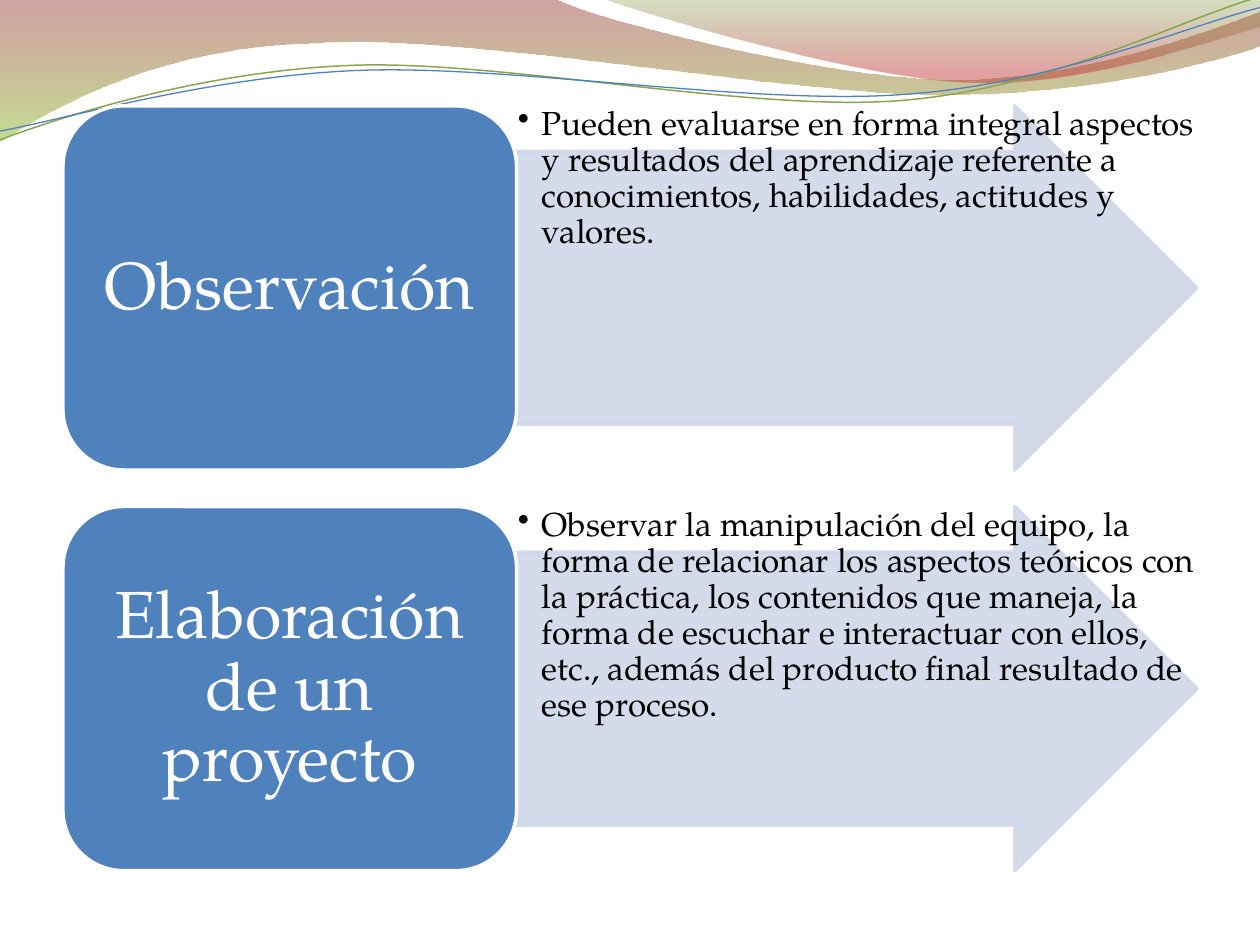
from lxml.etree import SubElement
from pptx import Presentation
from pptx.dml.color import RGBColor
from pptx.enum.shapes import MSO_SHAPE as Shape
from pptx.enum.text import MSO_ANCHOR as Anchor, PP_ALIGN as Align
from pptx.oxml.ns import qn
from pptx.util import Inches, Pt


def rgb(hex_color):
    return RGBColor.from_string(hex_color)


def set_opacity(element, *percents):
    """Give the colours inside element their opacities, in document order."""
    for color, percent in zip(list(element.iter(qn("a:srgbClr"))), percents):
        SubElement(color, qn("a:alpha"), val=str(percent * 1000))


def write(shape, text, size=19, color="000000", align=Align.LEFT,
          anchor=Anchor.TOP, inset=0.01, bullet=None, indent=0.19):
    frame = shape.text_frame
    frame.word_wrap = True
    frame.vertical_anchor = anchor
    frame.margin_left = frame.margin_right = Inches(inset)
    frame.margin_top = frame.margin_bottom = Inches(0.01)
    para = frame.paragraphs[0]
    para.alignment = align
    para.line_spacing = 0.9
    if bullet:
        properties = para._p.get_or_add_pPr()
        properties.set("marL", str(Inches(indent)))
        properties.set("indent", str(-Inches(indent)))
        SubElement(properties, qn("a:buChar"), char=bullet)
    span = para.add_run()
    span.text = text
    span.font.name = SlideBuilder.FONT
    span.font.size = Pt(size)
    span.font.color.rgb = rgb(color)


class SlideBuilder:
    FONT = "TeX Gyre Pagella"
    BLUE, PALE, WHITE = "4F81BD", "D0D8E8", "FFFFFF"

    def __init__(self, page):
        self.shapes = page.shapes

    def outline(self, start, segments, closed=False):
        """Draw segments of one point (a line) or three points (a Bézier curve)."""
        builder = self.shapes.build_freeform(Inches(start[0]), Inches(start[1]))
        points = [point for segment in segments for point in segment]
        builder.add_line_segments(
            [(Inches(x), Inches(y)) for x, y in points], close=closed)
        shape = builder.convert_to_shape()
        shape.shadow.inherit = False
        lines = iter(list(shape._element.iter(qn("a:lnTo"))))
        for segment in segments:
            first, *others = [next(lines) for _ in segment]
            if others:
                first.tag = qn("a:cubicBezTo")
                for line in others:
                    first.append(line[0])
                    line.getparent().remove(line)
        return shape

    def wave(self, start, segments, stops):
        """Draw a closed band with a downward gradient of (position, colour, opacity)."""
        shape = self.outline(start, segments, closed=True)
        shape.line.fill.background()
        shape.fill.gradient()
        shape.fill.gradient_angle = 270
        for stop, (position, color, _) in zip(shape.fill.gradient_stops, stops):
            stop.position = position
            stop.color.rgb = rgb(color)
        set_opacity(shape._element, *[opacity for _, _, opacity in stops])

    def curve(self, start, segments, color, width):
        shape = self.outline(start, segments)
        shape.fill.background()
        shape.line.color.rgb = rgb(color)
        shape.line.width = Pt(width)

    def block(self, kind, left, top, width, height, fill, line):
        shape = self.shapes.add_shape(
            kind, Inches(left), Inches(top), Inches(width), Inches(height))
        shape.shadow.inherit = False
        shape.fill.solid()
        shape.fill.fore_color.rgb = rgb(fill)
        shape.line.color.rgb = rgb(line)
        shape.line.width = Pt(2)
        return shape

    def arrow(self, text, *place):
        shape = self.block(Shape.RIGHT_ARROW, *place, self.PALE, self.PALE)
        shape.adjustments[0], shape.adjustments[1] = 0.75, 0.5
        set_opacity(shape._element, 90, 90)
        box = self.shapes.add_textbox(*[Inches(length) for length in place])
        write(box, text, bullet="•")

    def card(self, text, *place):
        shape = self.block(Shape.ROUNDED_RECTANGLE, *place, self.BLUE, self.WHITE)
        write(shape, text, size=38, color=self.WHITE, align=Align.CENTER,
              anchor=Anchor.MIDDLE, inset=0.02)


ROWS = [
    ("Observación",
     "Pueden evaluarse en forma integral aspectos y resultados del aprendizaje "
     "referente a conocimientos, habilidades, actitudes y valores."),
    ("Elaboración de un proyecto",
     "Observar la manipulación del equipo, la forma de relacionar los aspectos "
     "teóricos con la práctica, los contenidos que maneja, la forma de escuchar "
     "e interactuar con ellos, etc., además del producto final resultado de ese "
     "proceso."),
]


def draw_header(slide):
    slide.wave((0, 0), [
        [(4.4, -0.01)],
        [(4.76, 0.17), (6.64, 0.63), (7.58, 0.63)],
        [(8.53, 0.63), (9.58, 0.26), (10, 0.09)],
        [(10.01, 0.36)],
        [(9.83, 0.44), (8.7, 0.76), (7.46, 0.75)],
        [(6.22, 0.75), (3.82, 0.28), (2.57, 0.34)],
        [(1.29, 0.36), (0.46, 0.83), (-0.01, 1.13)],
    ], [(0, "973330", 45), (1, "95C238", 55)])
    slide.wave((4.79, -0.01), [
        [(5.09, 0.11), (6.82, 0.62), (7.69, 0.65)],
        [(8.56, 0.69), (9.61, 0.32), (10, 0.21)],
        [(10, 0)],
    ], [(0, "769537", 30), (0.8, "BE3330", 45)])
    slide.curve((0, 1.11), [
        [(0.48, 0.93), (1.58, 0.57), (2.77, 0.52)],
        [(3.95, 0.47), (5.93, 0.89), (7.13, 0.8)],
        [(8.33, 0.71), (9.38, 0.15), (9.98, -0.02)],
    ], "89A54F", 0.85)
    slide.curve((0, 1.04), [
        [(0.47, 0.96), (1.64, 0.61), (2.83, 0.56)],
        [(4.03, 0.51), (5.97, 0.84), (7.17, 0.75)],
        [(8.36, 0.67), (9.41, 0.21), (10, 0.06)],
    ], SlideBuilder.BLUE, 0.75)


def main():
    deck = Presentation()
    deck.slide_width, deck.slide_height = Inches(10), Inches(7.5)
    slide = SlideBuilder(deck.slides.add_slide(deck.slide_layouts[6]))
    draw_header(slide)

    left, first_top, height, pitch = 0.5, 0.84, 2.89, 3.18
    card_width, arrow_width = 3.6, 5.4
    for index, (title, detail) in enumerate(ROWS):
        top = first_top + index * pitch
        slide.arrow(detail, left + card_width, top, arrow_width, height)
        slide.card(title, left, top, card_width, height)
    deck.save("out.pptx")


if __name__ == "__main__":
    main()
